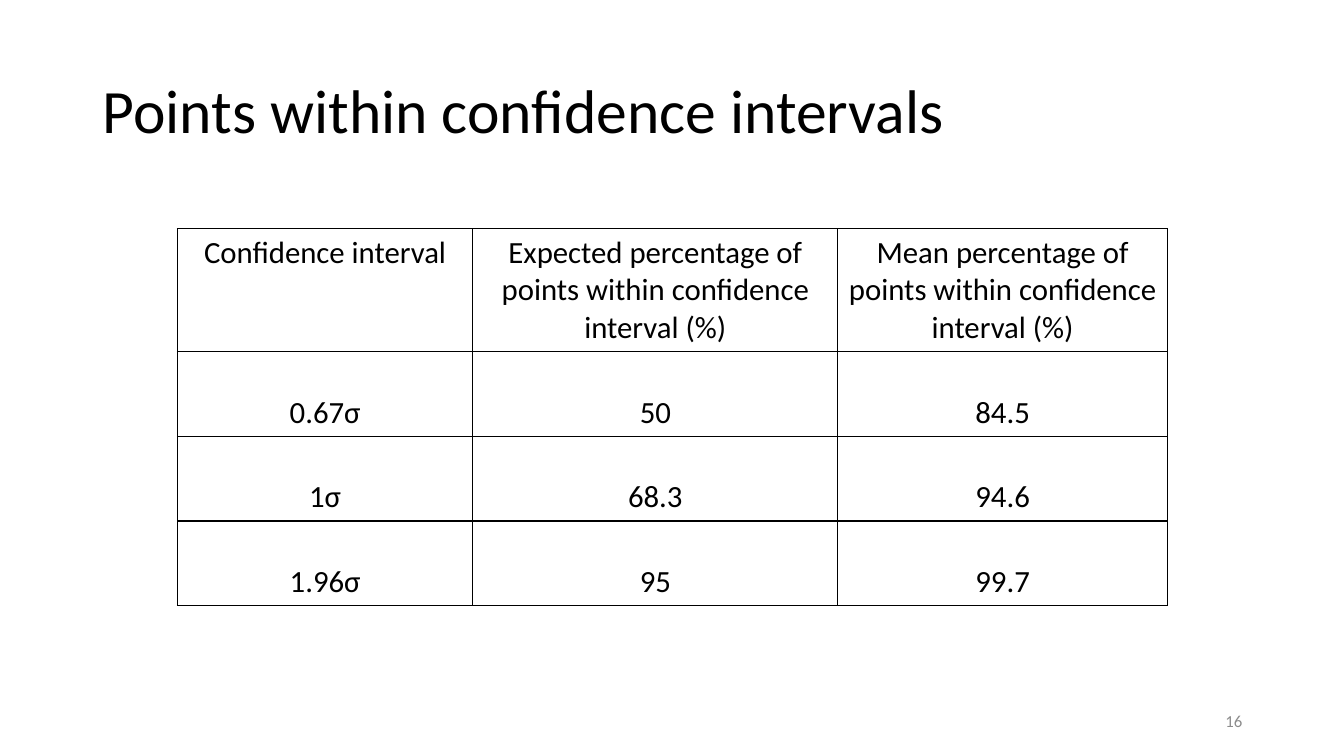
from pptx import Presentation
from pptx.dml.color import RGBColor
from pptx.enum.text import MSO_ANCHOR, PP_ALIGN
from pptx.oxml import parse_xml
from pptx.oxml.ns import nsdecls
from pptx.util import Inches, Pt

FONT = "Calibri"
BLACK = "000000"
GREY = "8C8C8C"

COLUMN_WIDTHS = [2.93, 3.62, 3.27]
HEADER_HEIGHT = 1.22
BODY_HEIGHT = 0.84
ROWS = [
    ["Confidence interval",
     "Expected percentage of points within confidence interval (%)",
     "Mean percentage of points within confidence interval (%)"],
    ["0.67σ", "50", "84.5"],
    ["1σ", "68.3", "94.6"],
    ["1.96σ", "95", "99.7"],
]


def color(hex_string):
    return RGBColor.from_string(hex_string)


def write(tf, text, size=22, fill=BLACK, align=PP_ALIGN.LEFT, spacing=None):
    p = tf.paragraphs[0]
    p.alignment = align
    p.line_spacing = spacing
    r = p.add_run()
    r.text = text
    r.font.name = FONT
    r.font.size = Pt(size)
    r.font.color.rgb = color(fill)


def add_text(s, text, left, top, width, height, **style):
    sp = s.shapes.add_textbox(Inches(left), Inches(top), Inches(width), Inches(height))
    tf = sp.text_frame
    tf.word_wrap = True
    tf.vertical_anchor = MSO_ANCHOR.MIDDLE
    write(tf, text, **style)


def add_borders(cell, hex_string=BLACK, width=1):
    tcPr = cell._tc.get_or_add_tcPr()
    # Borders come before the fill in the cell properties
    for i, side in enumerate(("lnL", "lnR", "lnT", "lnB")):
        tcPr.insert(i, parse_xml(
            f'<a:{side} {nsdecls("a")} w="{Pt(width)}"><a:solidFill>'
            f'<a:srgbClr val="{hex_string}"/></a:solidFill></a:{side}>'))


def add_interval_table(s, left, top):
    heights = [HEADER_HEIGHT] + [BODY_HEIGHT] * (len(ROWS) - 1)
    frame = s.shapes.add_table(
        len(ROWS), len(COLUMN_WIDTHS), Inches(left), Inches(top),
        Inches(sum(COLUMN_WIDTHS)), Inches(sum(heights)))
    table = frame.table
    table.first_row = False
    table.horz_banding = False
    for column, width in zip(table.columns, COLUMN_WIDTHS):
        column.width = Inches(width)
    for i, (values, height) in enumerate(zip(ROWS, heights)):
        table.rows[i].height = Inches(height)
        for j, value in enumerate(values):
            cell = table.cell(i, j)
            cell.fill.background()
            # Header text sits at the top, values at the bottom
            cell.vertical_anchor = MSO_ANCHOR.BOTTOM if i else MSO_ANCHOR.TOP
            write(cell.text_frame, value, align=PP_ALIGN.CENTER)
            add_borders(cell)


def main():
    prs = Presentation()
    prs.slide_width = Inches(13.33)
    prs.slide_height = Inches(7.5)
    s = prs.slides.add_slide(prs.slide_layouts[6])

    # Title
    add_text(s, "Points within confidence intervals", 0.92, 0.4, 11.5, 1.45,
             size=44, spacing=0.9)

    # Table
    add_interval_table(s, 1.76, 2.27)

    # Slide number
    add_text(s, "16", 9.42, 6.95, 3, 0.4, size=12, fill=GREY, align=PP_ALIGN.RIGHT)

    prs.save("out.pptx")


if __name__ == "__main__":
    main()
